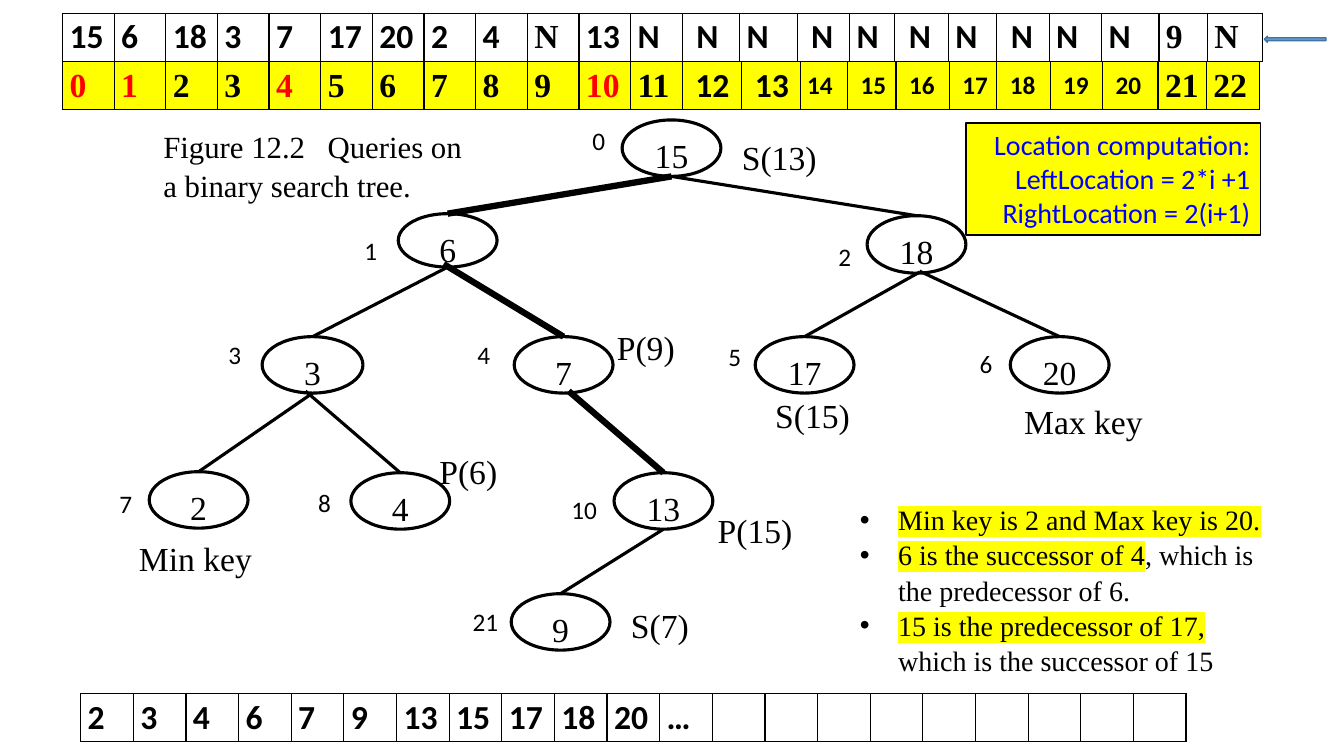
from collections.abc import Sequence
from dataclasses import dataclass

import lxml.etree
import pptx
import pptx.dml.color
import pptx.enum.shapes
import pptx.enum.text
import pptx.oxml.ns
import pptx.util

Inches = pptx.util.Inches
Pt = pptx.util.Pt
RGBColor = pptx.dml.color.RGBColor
Align = pptx.enum.text.PP_ALIGN
Anchor = pptx.enum.text.MSO_ANCHOR
Preset = pptx.enum.shapes.MSO_SHAPE
qn = pptx.oxml.ns.qn

BLACK = RGBColor(0x00, 0x00, 0x00)
WHITE = RGBColor(0xFF, 0xFF, 0xFF)
RED = RGBColor(0xFF, 0x00, 0x00)
YELLOW = RGBColor(0xFF, 0xFF, 0x00)
BLUE = RGBColor(0x00, 0x00, 0xFF)
ARROW_FILL = RGBColor(0x5B, 0x9B, 0xD5)
ARROW_LINE = RGBColor(0x43, 0x73, 0x9E)
SERIF = "Times New Roman"
SANS = "Calibri"


@dataclass(frozen=True)
class Span:
    text: str
    marked: bool = False


@dataclass(frozen=True)
class Node:
    key: int
    index: int
    left: float
    top: float
    index_right: float
    index_top: float
    width: float = 0.98
    height: float = 0.56
    on_query: bool = False
    edge_shift: tuple[float, float] = (0, 0)


@dataclass(frozen=True)
class Label:
    text: str
    left: float
    top: float
    width: float = 1.0


@dataclass(frozen=True)
class Cell:
    text: str
    font: str = SANS
    size: float = 24
    colour: RGBColor = BLACK
    pad: float = 0.07


NODES = [
    Node(15, 0, 6.17, 1.19, 6.1, 1.19),
    Node(6, 1, 3.95, 2.12, 3.84, 2.29, height=0.53, on_query=True),
    Node(18, 2, 8.6, 2.14, 8.54, 2.34, height=0.57),
    Node(3, 3, 2.6, 3.34, 2.49, 3.32, width=1),
    Node(7, 4, 5.1, 3.34, 4.96, 3.32, on_query=True, edge_shift=(-0.04, -0.03)),
    Node(17, 5, 7.49, 3.34, 7.45, 3.34, edge_shift=(0.03, -0.01)),
    Node(20, 6, 10.02, 3.34, 9.94, 3.41, edge_shift=(0.03, -0.02)),
    Node(2, 7, 1.48, 4.68, 1.41, 4.8),
    Node(4, 8, 3.48, 4.69, 3.38, 4.79, edge_shift=(-0.07, -0.02)),
    Node(13, 10, 6.09, 4.69, 6.02, 4.86, on_query=True, edge_shift=(0.05, -0.02)),
    Node(9, 21, 5.07, 5.89, 5.04, 5.97),
]
LABELS = [
    Label("S(13)", 7.26, 1.29),
    Label("P(9)", 6.02, 3.17),
    Label("S(15)", 7.59, 3.85),
    Label("P(15)", 7.02, 4.99),
    Label("S(7)", 6.16, 5.93),
    Label("P(6)", 4.26, 4.4),
    Label("Max key", 10.06, 3.91, 1.49),
    Label("Min key", 1.28, 5.27, 1.49),
]
FACTS = [
    [Span("Min key is 2 and Max key is 20.", True)],
    [Span("6 is the successor of 4", True), Span(", which is the predecessor of 6.")],
    [Span("15 is the predecessor of 17, ", True), Span("which is the successor of 15")],
]
KEY_WIDTHS = [6.15 / 12] * 12 + [0.57, 0.57, 0.52, 0.45, 0.53, 0.48, 0.52, 0.52, 0.57, 0.48, 0.55]
INDEX_WIDTHS = [6.15 / 12] * 12 + [0.59, 0.58, 0.47, 0.48, 0.53, 0.47, 0.53, 0.52, 0.55, 0.48, 0.53]
SORTED_WIDTHS = [10.97 / 21] * 21


def write(frame, paragraphs: Sequence[str | list[Span]], *, size: float = 24, font: str = SERIF,
          colour: RGBColor = BLACK, bold: bool = False, align=Align.LEFT,
          bulleted: bool = False, tab: float = 0) -> None:
    frame.word_wrap = True
    for number, content in enumerate(paragraphs):
        paragraph = frame.add_paragraph() if number else frame.paragraphs[0]
        paragraph.alignment = align
        paragraph.line_spacing = 1.05 if font == SERIF and not bold else 1.0
        properties = paragraph._p.get_or_add_pPr()
        if bulleted:
            properties.set("marL", str(Inches(0.38)))
            properties.set("indent", str(Inches(-0.38)))
            lxml.etree.SubElement(properties, qn("a:buFont"), typeface="Arial")
            lxml.etree.SubElement(properties, qn("a:buChar"), char="•")
        if tab:
            stops = lxml.etree.SubElement(properties, qn("a:tabLst"))
            lxml.etree.SubElement(stops, qn("a:tab"), pos=str(Inches(tab)), algn="l")
        for span in [Span(content)] if isinstance(content, str) else content:
            run = paragraph.add_run()
            run.text = span.text
            run.font.size, run.font.name, run.font.bold = Pt(size), font, bold
            run.font.color.rgb = colour
            if span.marked:
                highlight = lxml.etree.Element(qn("a:highlight"))
                lxml.etree.SubElement(highlight, qn("a:srgbClr"), val=str(YELLOW))
                run._r.rPr.find(qn("a:solidFill")).addnext(highlight)


def add_text(slide, left: float, top: float, width: float, height: float, paragraphs, **style) -> None:
    box = slide.shapes.add_textbox(Inches(left), Inches(top), Inches(width), Inches(height))
    write(box.text_frame, paragraphs, **style)


def add_preset(slide, preset, left: float, top: float, width: float, height: float, *,
               fill: RGBColor, line: RGBColor = BLACK, weight: float = 1):
    shape = slide.shapes.add_shape(preset, Inches(left), Inches(top), Inches(width), Inches(height))
    shape.shadow.inherit = False
    shape.fill.solid()
    shape.fill.fore_color.rgb = fill
    shape.line.color.rgb = line
    shape.line.width = Pt(weight)
    shape.text_frame.vertical_anchor = Anchor.TOP
    return shape


def add_edge(slide, parent: Node, child: Node, child_oval) -> None:
    """Join the foot of the parent to the top of the child."""
    shift_x, shift_y = child.edge_shift
    edge = slide.shapes.add_connector(
        pptx.enum.shapes.MSO_CONNECTOR.STRAIGHT,
        Inches(parent.left + parent.width / 2 + shift_x), Inches(parent.top + parent.height + shift_y),
        Inches(child.left + child.width / 2), Inches(child.top))
    edge.end_connect(child_oval, 0)
    edge.line.color.rgb = BLACK
    edge.line.width = Pt(4.5 if child.on_query else 2.25)
    lxml.etree.SubElement(edge._element.spPr, qn("a:effectLst"))


def add_tree(slide) -> None:
    """Draw the nodes; the parent of location i is at (i - 1) // 2."""
    ovals = {}
    for node in NODES:
        oval = add_preset(slide, Preset.OVAL, node.left, node.top, node.width, node.height,
                          fill=WHITE, weight=2.25)
        write(oval.text_frame, [str(node.key)], align=Align.CENTER)
        ovals[node.index] = oval
        add_text(slide, node.index_right - 0.6, node.index_top, 0.6, 0.4, [str(node.index)],
                 size=18, font=SANS, align=Align.RIGHT)
    by_index = {node.index: node for node in NODES}
    for node in NODES[1:]:
        add_edge(slide, by_index[(node.index - 1) // 2], node, ovals[node.index])


def add_array(slide, left: float, top: float, widths: list[float], cells: list[Cell], fill: RGBColor) -> None:
    array = slide.shapes.add_table(1, len(widths), Inches(left), Inches(top),
                                   Inches(sum(widths)), Inches(0.48)).table
    array.first_row = array.horz_banding = False
    for column, width in enumerate(widths):
        array.columns[column].width = Inches(width)
        cell = array.cell(0, column)
        cell.vertical_anchor = Anchor.MIDDLE
        cell.margin_left = cell.margin_right = Inches(0.07)
        cell.margin_top = cell.margin_bottom = 0
        for side in ("a:lnL", "a:lnR", "a:lnT", "a:lnB"):
            border = lxml.etree.SubElement(cell._tc.get_or_add_tcPr(), qn(side), w=str(Pt(1)))
            paint = lxml.etree.SubElement(border, qn("a:solidFill"))
            lxml.etree.SubElement(paint, qn("a:srgbClr"), val=str(BLACK))
        cell.fill.solid()
        cell.fill.fore_color.rgb = fill
        if column < len(cells):
            entry = cells[column]
            cell.margin_left = Inches(entry.pad)
            write(cell.text_frame, [entry.text], size=entry.size, font=entry.font,
                  colour=entry.colour, bold=True)


def key_cell(index: int) -> Cell:
    keys = {node.index: str(node.key) for node in NODES}
    return Cell(keys.get(index, "N"), font=SERIF if index in (9, 21, 22) else SANS,
                pad=0.14 if index in (12, 14, 16, 18) else 0.07)


def index_cell(index: int) -> Cell:
    if 12 <= index <= 20:
        return Cell(str(index), size=24 if index < 14 else 18, pad=0.07 if index == 14 else 0.13)
    return Cell(str(index), font=SERIF, colour=RED if index in (0, 1, 4, 10) else BLACK)


def main() -> None:
    deck = pptx.Presentation()
    deck.slide_width, deck.slide_height = Inches(13.33), Inches(7.5)
    slide = deck.slides.add_slide(deck.slide_layouts[5])

    caption = slide.shapes.title
    caption.left, caption.top, caption.width, caption.height = map(Inches, (1.52, 1.2, 3.39, 0.84))
    caption.text_frame.auto_size = pptx.enum.text.MSO_AUTO_SIZE.NONE
    caption.text_frame.vertical_anchor = Anchor.TOP
    write(caption.text_frame, ["Figure 12.2\tQueries on", "a binary search tree."], size=22, tab=1.63)

    add_tree(slide)
    for label in LABELS:
        add_text(slide, label.left, label.top, label.width, 0.5, [label.text])
    add_array(slide, 0.62, 0.61, INDEX_WIDTHS, [index_cell(i) for i in range(23)], YELLOW)
    add_text(slide, 8.43, 4.92, 4.26, 1.78, FACTS, size=20, bulleted=True)
    add_array(slide, 0.62, 0.13, KEY_WIDTHS, [key_cell(i) for i in range(23)], WHITE)

    formulas = add_preset(slide, Preset.RECTANGLE, 9.58, 1.22, 2.92, 1.11, fill=YELLOW)
    write(formulas.text_frame, ["Location computation:", "LeftLocation = 2*i +1", "RightLocation = 2(i+1)"],
          size=20, font=SANS, colour=BLUE, align=Align.RIGHT)
    add_preset(slide, Preset.LEFT_ARROW, 12.54, 0.36, 0.61, 0.06, fill=ARROW_FILL, line=ARROW_LINE)

    sorted_keys = [str(key) for key in sorted(node.key for node in NODES)]
    add_array(slide, 0.8, 6.88, SORTED_WIDTHS, [Cell(text) for text in sorted_keys + ["…"]], WHITE)
    deck.save("out.pptx")


if __name__ == "__main__":
    main()
